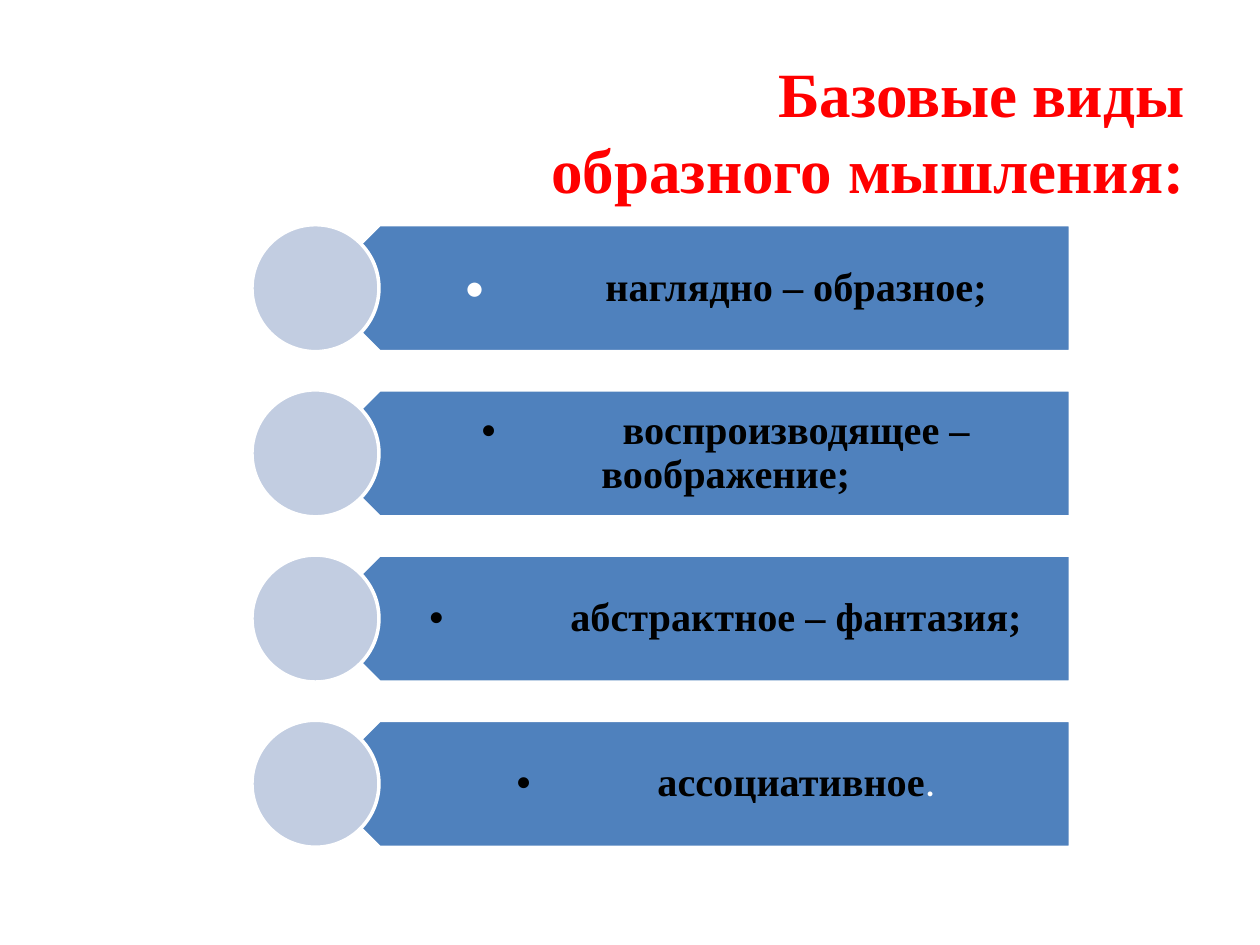
from lxml import etree
from pptx import Presentation
from pptx.dml.color import RGBColor
from pptx.enum.shapes import MSO_SHAPE
from pptx.enum.text import MSO_ANCHOR, PP_ALIGN
from pptx.oxml.ns import qn
from pptx.util import Cm, Pt

PLATE = MSO_SHAPE.PENTAGON
DISC = MSO_SHAPE.OVAL
MIDDLE = MSO_ANCHOR.MIDDLE
CENTER = PP_ALIGN.CENTER
RIGHT = PP_ALIGN.RIGHT

RED = RGBColor(0xFF, 0x00, 0x00)
BLUE = RGBColor(0x4F, 0x81, 0xBD)
PALE = RGBColor(0xC2, 0xCD, 0xE1)
WHITE = RGBColor(0xFF, 0xFF, 0xFF)
BLACK = RGBColor(0x00, 0x00, 0x00)
SERIF = "Times New Roman"
SANS = "Calibri"

TOP, STEP, HIGH = 4.53, 3.33, 2.56
TAB = 2.84
PLAIN = dict(face=SANS, color=WHITE, bold=False)
ITEMS = [
    [("•", PLAIN), ("\tнаглядно – образное;", {})],
    [("•\tвоспроизводящее – воображение;", {})],
    [("•\tабстрактное – фантазия;", {})],
    [("•\tассоциативное", {}), (".", PLAIN)],
]


def write(line, text, size=23, face=SERIF, color=BLACK, bold=True):
    run = line.add_run()
    run.text = text
    font = run.font
    font.size, font.name, font.bold = Pt(size), face, bold
    font.color.rgb = color


class Deck:
    def __init__(self):
        self.show = Presentation()
        self.show.slide_width = Cm(25.4)
        self.show.slide_height = Cm(19.05)
        self.slide = self.show.slides.add_slide(self.show.slide_layouts[5])
        self.group = self.slide.shapes.add_group_shape().shapes

    def title(self, text, left, top, width, height):
        head = self.slide.shapes.title
        head.left, head.top = Cm(left), Cm(top)
        head.width, head.height = Cm(width), Cm(height)
        head.text_frame.vertical_anchor = MIDDLE
        line = head.text_frame.paragraphs[0]
        line.alignment = RIGHT
        write(line, text, size=36, color=RED)

    def shape(self, kind, left, top, width, fill, turn=0):
        form = self.group.add_shape(kind, Cm(left), Cm(top), Cm(width), Cm(HIGH))
        form.rotation = turn
        form.shadow.inherit = False
        form.fill.solid()
        form.fill.fore_color.rgb = fill
        form.line.color.rgb = WHITE
        form.line.width = Pt(2)

    def label(self, parts, left, top, width):
        box = self.group.add_textbox(Cm(left), Cm(top), Cm(width), Cm(HIGH))
        frame = box.text_frame
        frame.word_wrap = True
        frame.vertical_anchor = MIDDLE
        frame.margin_left, frame.margin_right = Cm(1.14), Cm(0.46)
        frame.margin_top = frame.margin_bottom = Cm(0.25)
        line = frame.paragraphs[0]
        line.alignment = CENTER
        line.line_spacing = 0.9
        tabs = etree.SubElement(line._p.get_or_add_pPr(), qn("a:tabLst"))
        etree.SubElement(tabs, qn("a:tab"), pos=str(Cm(TAB)), algn="l")
        for text, style in parts:
            write(line, text, **style)

    def item(self, parts, top):
        self.shape(PLATE, 6.37, top, 15.21, BLUE, turn=180)
        self.label(parts, 7.02, top, 14.55)
        self.shape(DISC, 5.08, top, HIGH, PALE)


def main():
    deck = Deck()
    deck.title("Базовые виды образного мышления:", 10.11, 1.32, 14.02, 2.62)
    for row, parts in enumerate(ITEMS):
        deck.item(parts, TOP + row * STEP)
    deck.show.save("out.pptx")


if __name__ == "__main__":
    main()
